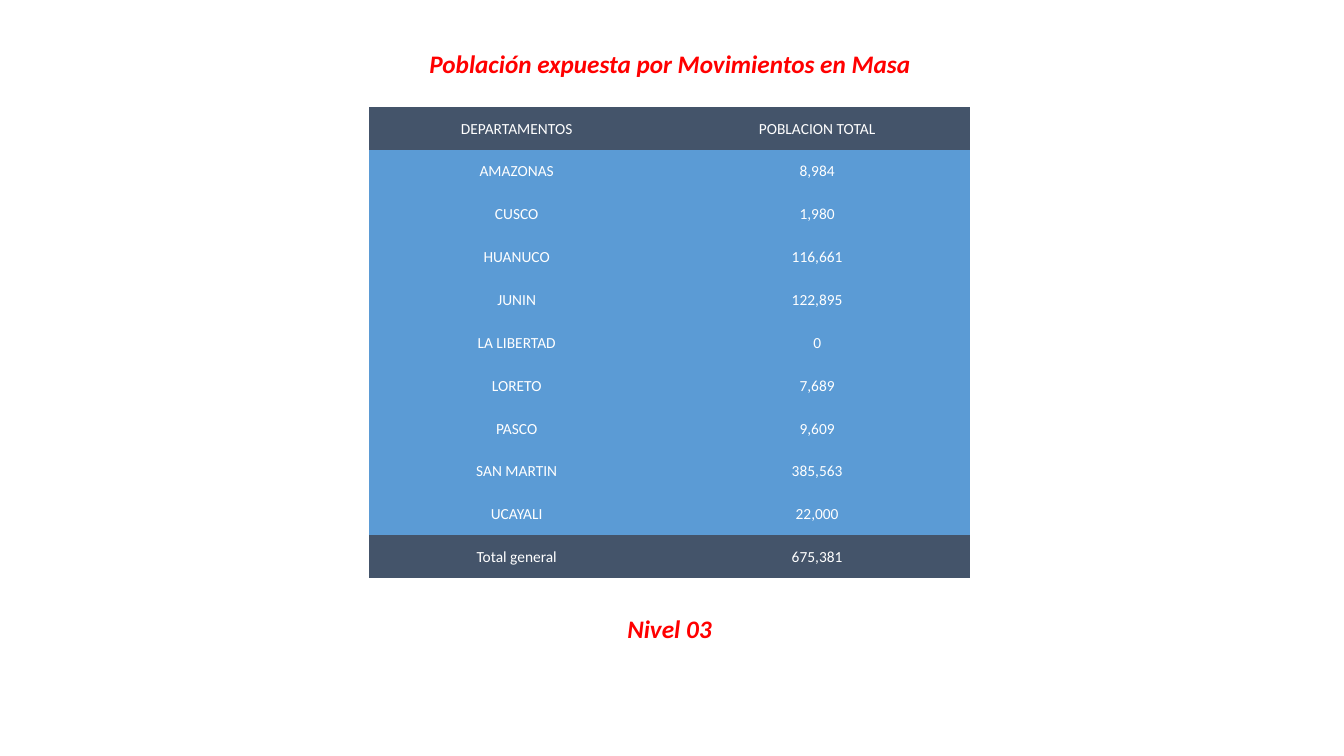
from pptx import Presentation
from pptx.dml.color import RGBColor
from pptx.enum.text import MSO_ANCHOR, MSO_AUTO_SIZE, PP_ALIGN
from pptx.oxml.ns import qn
from pptx.util import Inches, Pt

CENTER = PP_ALIGN.CENTER
MIDDLE = MSO_ANCHOR.MIDDLE
FIXED = MSO_AUTO_SIZE.NONE
PLAIN = "{2D5ABB26-0587-4C30-8999-92F81FD0307C}"  # table style without grid

COLORS = {"red": "FF0000", "white": "FFFFFF", "dark": "44546A", "blue": "5B9BD5"}
HEAD = {"name": "Calibri", "size": Pt(18), "bold": True, "italic": True}
BODY = {"name": "Calibri", "size": Pt(11), "bold": False}

ROWS = [
    ("DEPARTAMENTOS", "POBLACION TOTAL"),
    ("AMAZONAS", "8,984"),
    ("CUSCO", "1,980"),
    ("HUANUCO", "116,661"),
    ("JUNIN", "122,895"),
    ("LA LIBERTAD", "0"),
    ("LORETO", "7,689"),
    ("PASCO", "9,609"),
    ("SAN MARTIN", "385,563"),
    ("UCAYALI", "22,000"),
    ("Total general", "675,381"),
]


def color(name):
    return RGBColor.from_string(COLORS[name])


def set_text(frame, text, style, tint):
    frame.text = text
    par = frame.paragraphs[0]
    par.alignment = CENTER
    font = par.runs[0].font
    for key, value in style.items():
        setattr(font, key, value)
    font.color.rgb = color(tint)


def add_label(shape, box, text):
    """Place a red heading in its box."""
    shape.left, shape.top, shape.width, shape.height = map(Inches, box)
    frame = shape.text_frame
    form = {"word_wrap": False, "auto_size": FIXED, "vertical_anchor": MIDDLE}
    for key, value in form.items():
        setattr(frame, key, value)
    set_text(frame, text, HEAD, "red")


def add_grid(slide, box, widths):
    """Draw the population table with dark first and last rows."""
    left, top, width, height = map(Inches, box)
    table = slide.shapes.add_table(
        len(ROWS), len(widths), left, top, width, height).table
    table._tbl.tblPr.find(qn("a:tableStyleId")).text = PLAIN
    for col, size in zip(table.columns, widths):
        col.width = Inches(size)
    edge = Inches(0.01)
    form = {"margin_left": edge, "margin_right": edge, "margin_top": edge,
            "margin_bottom": 0, "vertical_anchor": MIDDLE}
    for i, row in enumerate(ROWS):
        table.rows[i].height = height // len(ROWS)
        fill = "dark" if i in (0, len(ROWS) - 1) else "blue"
        for j, text in enumerate(row):
            cell = table.cell(i, j)
            for key, value in form.items():
                setattr(cell, key, value)
            cell.fill.solid()
            cell.fill.fore_color.rgb = color(fill)
            set_text(cell.text_frame, text, BODY, "white")


def main():
    deck = Presentation()
    deck.slide_width, deck.slide_height = Inches(13.33), Inches(7.5)
    slide = deck.slides.add_slide(deck.slide_layouts[5])
    # Title
    add_label(slide.shapes.title, (4.13, 0.43, 5.03, 0.4),
              "Población expuesta por Movimientos en Masa")
    # Level
    level = slide.shapes.add_textbox(0, 0, 0, 0)
    add_label(level, (6.09, 6.03, 1.1, 0.4), "Nivel 03")
    # Table
    add_grid(slide, (3.66, 1.06, 5.96, 4.68), (2.93, 3.03))
    deck.save("out.pptx")


if __name__ == "__main__":
    main()
